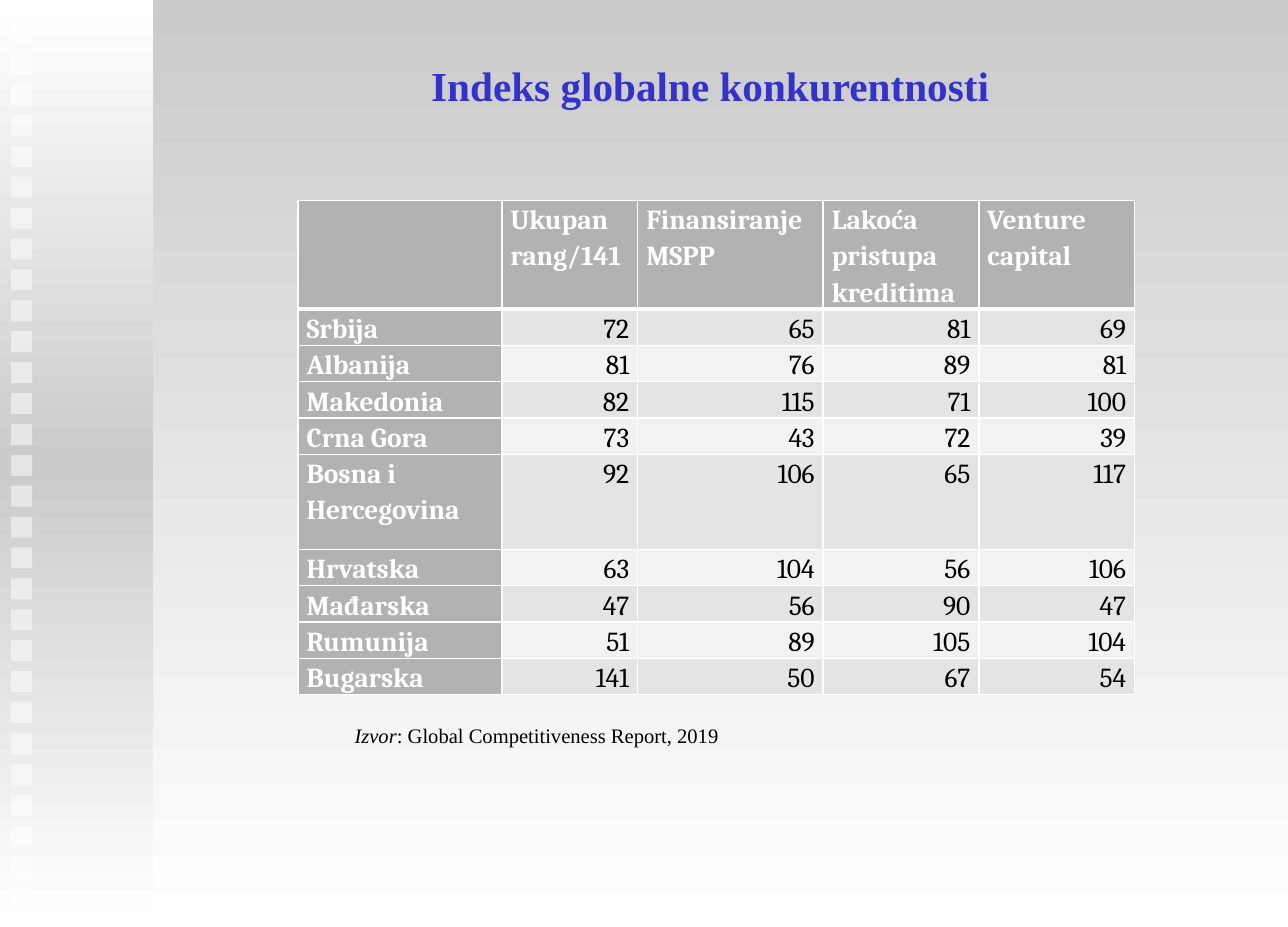
from copy import deepcopy

from lxml.etree import SubElement
from pptx import Presentation
from pptx.dml.color import RGBColor
from pptx.enum.shapes import MSO_SHAPE
from pptx.enum.text import MSO_ANCHOR, MSO_AUTO_SIZE, PP_ALIGN
from pptx.oxml.ns import qn
from pptx.util import Inches, Pt

WHITE = RGBColor(0xFF, 0xFF, 0xFF)
BLACK = RGBColor(0x00, 0x00, 0x00)
SILVER = RGBColor(0xCB, 0xCB, 0xCB)
BLUE = RGBColor(0x33, 0x33, 0xCC)
HEADING_GRAY = RGBColor(0xB2, 0xB2, 0xB2)
BANDS = (RGBColor(0xF2, 0xF2, 0xF2), RGBColor(0xE4, 0xE4, 0xE4))

HEADINGS = ("", "Ukupan rang/141", "Finansiranje MSPP",
            "Lakoća pristupa kreditima", "Venture capital")
RANKS = (
    ("Srbija", 72, 65, 81, 69),
    ("Albanija", 81, 76, 89, 81),
    ("Makedonia", 82, 115, 71, 100),
    ("Crna Gora", 73, 43, 72, 39),
    ("Bosna i Hercegovina", 92, 106, 65, 117),
    ("Hrvatska", 63, 104, 56, 106),
    ("Mađarska", 47, 56, 90, 47),
    ("Rumunija", 51, 89, 105, 104),
    ("Bugarska", 141, 50, 67, 54),
)


class SlideBuilder:
    """Places elements on a grid of 100 columns by 100 rows."""

    text_font = "Times New Roman"
    table_font = "Cambria"

    def __init__(self, deck):
        self.column = deck.slide_width / 100
        self.row = deck.slide_height / 100
        self.page = deck.slides.add_slide(deck.slide_layouts[5])

    def area(self, left, top, width, height):
        return (int(left * self.column), int(top * self.row),
                int(width * self.column), int(height * self.row))

    def style(self, span, font, size, color, bold=False, italic=False):
        span.font.name = font
        span.font.size = Pt(size)
        span.font.color.rgb = color
        span.font.bold = bold
        span.font.italic = italic

    def gradient(self, fill, owner, colors):
        fill.gradient()
        fill.gradient_angle = 270
        stops = next(owner.iter(qn("a:gsLst")))
        while len(stops) < len(colors):
            stops.append(deepcopy(stops[0]))
        for index, (stop, color) in enumerate(zip(fill.gradient_stops, colors)):
            stop.color.rgb = color
            stop.position = index / (len(colors) - 1)

    def background(self, *colors):
        self.gradient(self.page.background.fill, self.page.element, colors)

    def rectangle(self, *place):
        box = self.page.shapes.add_shape(MSO_SHAPE.RECTANGLE, *self.area(*place))
        box.shadow.inherit = False
        box.line.fill.background()
        return box

    def panel(self, *place, colors):
        box = self.rectangle(*place)
        self.gradient(box.fill, box.element, colors)

    def translucent_square(self, *place):
        box = self.rectangle(*place)
        box.fill.solid()
        box.fill.fore_color.rgb = WHITE
        color = next(box.element.spPr.iter(qn("a:srgbClr")))
        SubElement(color, qn("a:alpha"), val="50000")

    def title(self, text, *place):
        box = self.page.shapes.title
        box.left, box.top, box.width, box.height = self.area(*place)
        frame = box.text_frame
        frame.text = text
        frame.word_wrap = True
        frame.auto_size = MSO_AUTO_SIZE.NONE
        frame.vertical_anchor = MSO_ANCHOR.TOP
        para = frame.paragraphs[0]
        para.alignment = PP_ALIGN.CENTER
        para.space_before = Pt(3)
        self.style(para.runs[0], self.text_font, 24, BLUE, bold=True)

    def source(self, label, text, *place):
        frame = self.page.shapes.add_textbox(*self.area(*place)).text_frame
        frame.word_wrap = True
        frame.auto_size = MSO_AUTO_SIZE.SHAPE_TO_FIT_TEXT
        frame.vertical_anchor = MSO_ANCHOR.MIDDLE
        for words, italic in ((label, True), (text, False)):
            span = frame.paragraphs[0].add_run()
            span.text = words
            self.style(span, self.text_font, 12, BLACK, italic=italic)

    def borders(self, cell, **widths):
        properties = cell._tc.get_or_add_tcPr()
        for index, side in enumerate("LRTB"):
            line = SubElement(properties, qn(f"a:ln{side}"),
                              w=str(Pt(widths.get(side, 1))))
            fill = SubElement(line, qn("a:solidFill"))
            SubElement(fill, qn("a:srgbClr"), val=str(WHITE))
            properties.insert(index, line)

    def cell(self, cell, value, is_heading, band):
        cell.margin_left = cell.margin_right = Inches(0.07)
        cell.margin_top = cell.margin_bottom = 0
        cell.fill.solid()
        cell.fill.fore_color.rgb = HEADING_GRAY if is_heading else band
        cell.text_frame.text = str(value)
        para = cell.text_frame.paragraphs[0]
        para.line_spacing = 1.15
        para.alignment = PP_ALIGN.LEFT if is_heading else PP_ALIGN.RIGHT
        for span in para.runs:
            self.style(span, self.table_font, 16,
                       WHITE if is_heading else BLACK, bold=is_heading)

    def table(self, records, widths, heights, left, top):
        place = self.area(left, top, sum(widths), sum(heights))
        table = self.page.shapes.add_table(len(records), len(widths), *place).table
        for column, width in zip(table.columns, widths):
            column.width = int(width * self.column)
        for row, height in zip(table.rows, heights):
            row.height = int(height * self.row)
        for r, record in enumerate(records):
            for c, value in enumerate(record):
                cell = table.cell(r, c)
                self.cell(cell, value, r == 0 or c == 0, BANDS[r % 2])
                self.borders(cell, B=3 if r == 0 else 1, T=3 if r == 1 else 1)


def main():
    deck = Presentation()
    deck.slide_width, deck.slide_height = Inches(10.42), Inches(7.5)
    slide = SlideBuilder(deck)

    # Background and side panel with its strip of squares
    slide.background(SILVER, WHITE)
    slide.panel(0, 0, 11.9, 100, colors=(WHITE, SILVER, WHITE))
    for step in range(29):
        slide.translucent_square(0.86, 2.4 + step * 100 / 30, 1.63, 2.27)

    # Heading
    slide.title("Indeks globalne konkurentnosti", 12.96, 5.87, 84.36, 90.27)

    # Ranking table
    tall, low = 10.27, 3.2
    slide.table((HEADINGS, *RANKS),
                widths=(15.83, 10.56, 14.4, 12.09, 12.09),
                heights=(tall, *[low] * 4) * 2,
                left=23.13, top=21.6)

    # Source line
    slide.source("Izvor", ": Global Competitiveness Report, 2019",
                 26.58, 77.33, 58.16, 4)

    deck.save("out.pptx")


if __name__ == "__main__":
    main()
